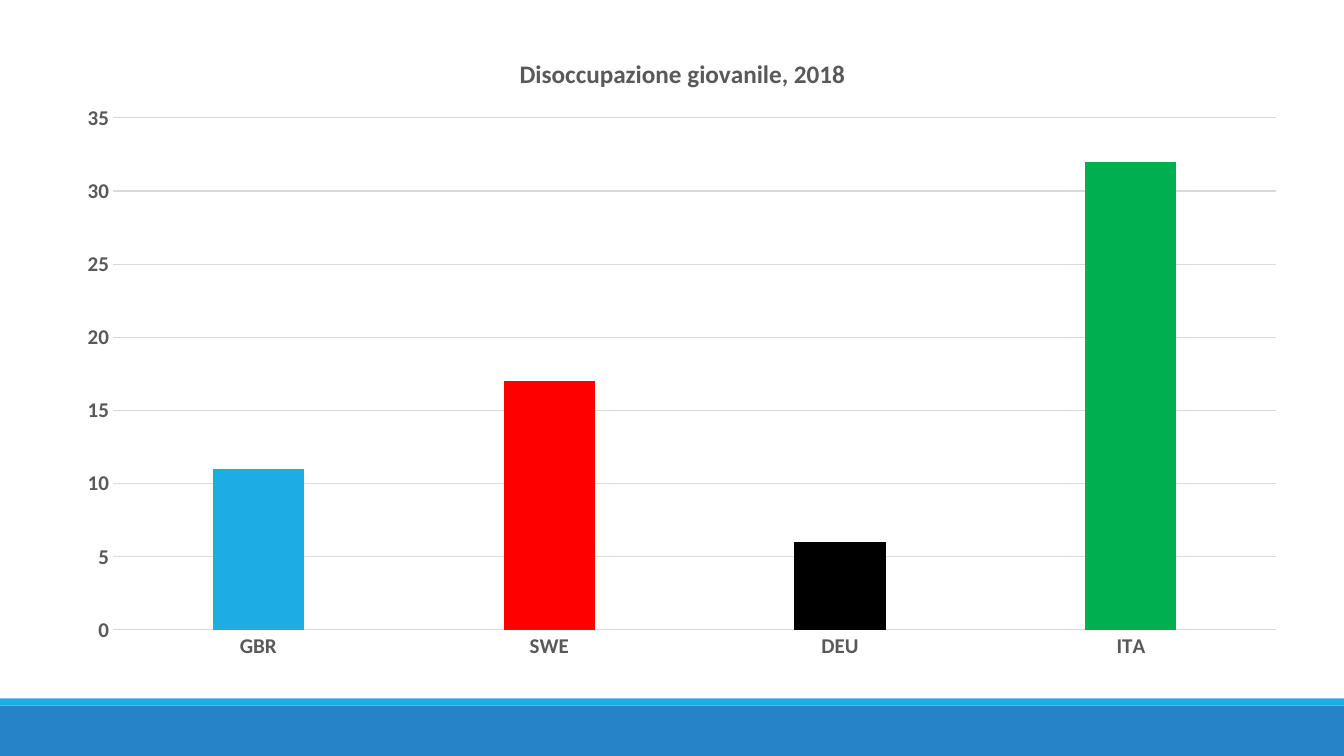
from lxml import etree
from pptx import Presentation
from pptx import util as u
from pptx.chart.data import CategoryChartData
from pptx.dml.color import RGBColor
from pptx.enum import chart as charts, shapes
from pptx.oxml.ns import qn

TITLE = "Disoccupazione giovanile, 2018"
UNEMPLOYMENT = [
    ("GBR", 11, "1CADE4"),
    ("SWE", 17, "FF0000"),
    ("DEU", 6, "000000"),
    ("ITA", 32, "00B050"),
]
FOOTER_BANDS = [(7, 0.5, "2683C6"), (6.93, 0.07, "1CADE4")]
CHART_BOX = (0.63, 0.33, 12.28, 6.33)
PLOT_BOX = (1.12, 1.17, 11.54, 5.08)
SLIDE_WIDTH, SLIDE_HEIGHT = 13.33, 7.5
THEME = {
    "font": "Calibri",
    "text": "595959",
    "line": "D9D9D9",
    "title_size": 18,
    "axis_size": 15,
    "line_width": 0.75,
}


def color(name):
    return RGBColor.from_string(name)


def style_font(font, size):
    font.name = THEME["font"]
    font.size = u.Pt(size)
    font.bold = True
    font.color.rgb = color(THEME["text"])


def style_line(line):
    line.color.rgb = color(THEME["line"])
    line.width = u.Pt(THEME["line_width"])


def place_plot(chart):
    chart_left, chart_top, chart_width, chart_height = CHART_BOX
    left, top, width, height = PLOT_BOX
    settings = {
        "layoutTarget": "inner",
        "xMode": "edge",
        "yMode": "edge",
        "x": (left - chart_left) / chart_width,
        "y": (top - chart_top) / chart_height,
        "w": width / chart_width,
        "h": height / chart_height,
    }
    plot_area = chart.element.find(".//" + qn("c:plotArea"))
    for layout in plot_area.findall(qn("c:layout")):
        plot_area.remove(layout)
    layout = etree.Element(qn("c:layout"))
    plot_area.insert(0, layout)
    manual = etree.SubElement(layout, qn("c:manualLayout"))
    for tag, value in settings.items():
        etree.SubElement(manual, qn("c:" + tag)).set("val", str(value))


def add_band(slide, top, height, fill):
    band = slide.shapes.add_shape(
        shapes.MSO_SHAPE.RECTANGLE, 0, u.Inches(top), u.Inches(SLIDE_WIDTH), u.Inches(height)
    )
    band.shadow.inherit = False
    band.fill.solid()
    band.fill.fore_color.rgb = color(fill)
    band.line.fill.background()


def add_unemployment_chart(slide):
    data = CategoryChartData()
    data.categories = [country for country, _, _ in UNEMPLOYMENT]
    data.add_series("Series 1", [value for _, value, _ in UNEMPLOYMENT])
    chart = slide.shapes.add_chart(
        charts.XL_CHART_TYPE.COLUMN_CLUSTERED, *map(u.Inches, CHART_BOX), data
    ).chart
    chart.font.name = THEME["font"]
    chart.font.size = u.Pt(10)
    chart.has_legend = False

    chart.has_title = True
    title = chart.chart_title
    title.include_in_layout = False
    title.text_frame.text = TITLE
    style_font(title.text_frame.paragraphs[0].runs[0].font, THEME["title_size"])

    for axis in (chart.category_axis, chart.value_axis):
        axis.major_tick_mark = charts.XL_TICK_MARK.NONE
        axis.minor_tick_mark = charts.XL_TICK_MARK.NONE
        style_font(axis.tick_labels.font, THEME["axis_size"])
    style_line(chart.category_axis.format.line)
    values = chart.value_axis
    values.minimum_scale, values.maximum_scale, values.major_unit = 0, 35, 5
    values.format.line.fill.background()
    values.has_major_gridlines = True
    style_line(values.major_gridlines.format.line)

    plot = chart.plots[0]
    plot.gap_width, plot.overlap = 219, -27
    plot.vary_by_categories = False
    for index, (_, _, fill) in enumerate(UNEMPLOYMENT):
        bar = plot.series[0].points[index].format.fill
        bar.solid()
        bar.fore_color.rgb = color(fill)
    place_plot(chart)


def main():
    presentation = Presentation()
    presentation.slide_width = u.Inches(SLIDE_WIDTH)
    presentation.slide_height = u.Inches(SLIDE_HEIGHT)
    slide = presentation.slides.add_slide(presentation.slide_layouts[6])
    for band in FOOTER_BANDS:
        add_band(slide, *band)
    add_unemployment_chart(slide)
    presentation.save("out.pptx")


if __name__ == "__main__":
    main()
